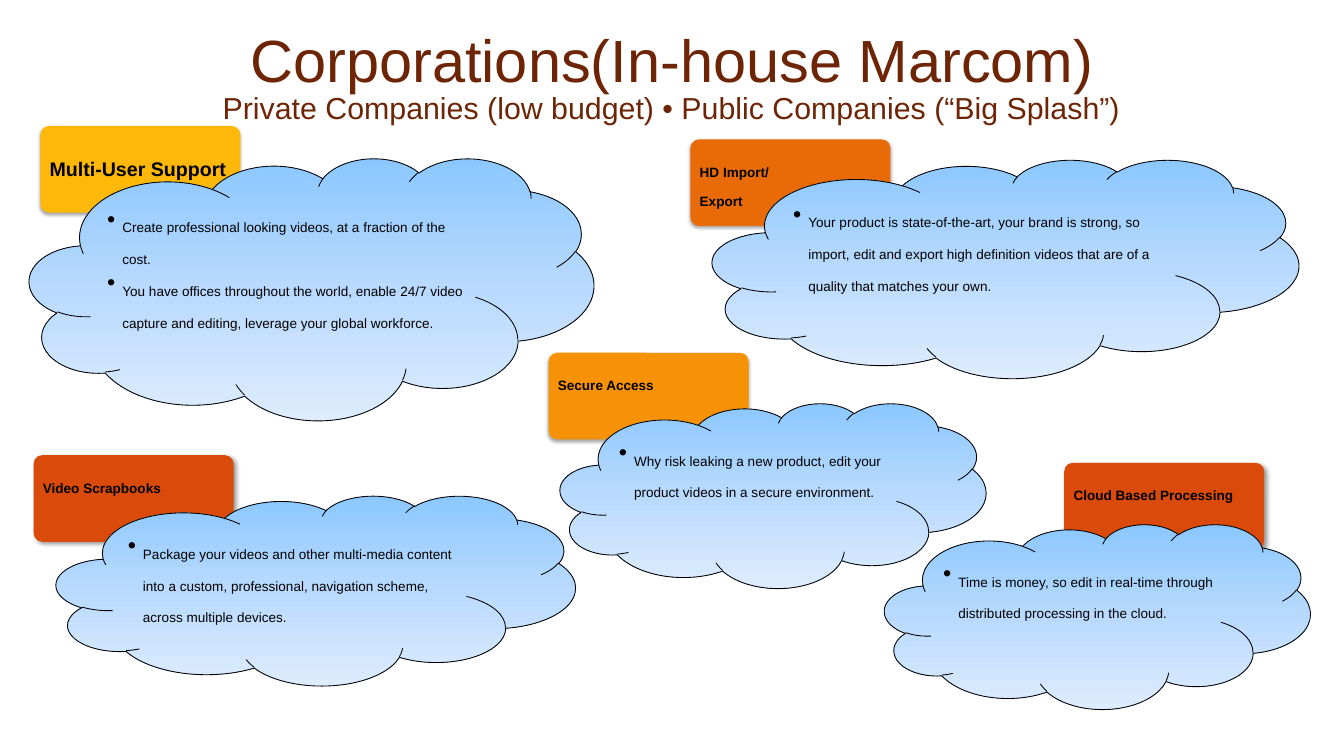
import pptx
import pptx.util
import pptx.dml.color
import pptx.enum.shapes
import pptx.enum.text
import pptx.oxml
import pptx.oxml.ns
from dataclasses import dataclass

Pt = pptx.util.Pt
RGB = pptx.dml.color.RGBColor.from_string
SHAPES = pptx.enum.shapes.MSO_SHAPE
TEXT = pptx.enum.text


@dataclass(frozen=True)
class Theme:
    font: str = "Arial"
    ink: str = "000000"
    title: str = "6D2506"
    sky: tuple = ((0, "8BC7FF"), (50, "B9DAFE"), (100, "DDECFE"))
    title_size: int = 51
    subtitle_size: int = 26
    body_size: int = 20
    lead_size: int = 29
    lowered: str = "-25000"
    soft: tuple = (35, 3.1, 1.8, 90)  # opacity, blur, distance, angle
    deep: tuple = (40, 4, 3, 45)


theme = Theme()


def parse_xml(tag, content, attributes=""):
    space = pptx.oxml.ns.nsdecls("a")
    return pptx.oxml.parse_xml(f"<a:{tag} {space} {attributes}>{content}</a:{tag}>")


def write_lines(para, lines, size, bold=False):
    """Fill a paragraph with lowered text, one run per line."""
    for number, line in enumerate(lines):
        if number:
            para.add_line_break()
        span = para.add_run()
        span.text = line
        span._r.get_or_add_rPr().set("baseline", theme.lowered)
    para.alignment = TEXT.PP_ALIGN.LEFT
    para.font.name = theme.font
    para.font.size = Pt(size)
    para.font.bold = bold
    para.font.color.rgb = RGB(theme.ink)


deck = pptx.Presentation()
deck.slide_width, deck.slide_height = Pt(1152), Pt(648)
page = deck.slides.add_slide(deck.slide_layouts[5])

# Title and subtitle
title = page.shapes.title
title.left, title.top, title.width, title.height = Pt(57.6), Pt(14.4), Pt(1036.8), Pt(108)
frame = title.text_frame
frame.auto_size = TEXT.MSO_AUTO_SIZE.NONE
frame.word_wrap = True
frame.vertical_anchor = TEXT.MSO_ANCHOR.MIDDLE
frame.margin_left = frame.margin_right = Pt(10)
frame.margin_top = frame.margin_bottom = Pt(5)
para = frame.paragraphs[0]
para.alignment = TEXT.PP_ALIGN.CENTER
para.line_spacing = 0.85
for text, size in (
    ("Corporations(In-house Marcom)", theme.title_size),
    ("Private Companies (low budget) • Public Companies (“Big Splash”)", theme.subtitle_size),
):
    if para.runs:
        para.add_line_break()
    span = para.add_run()
    span.text = text
    span.font.size = Pt(size)
    span.font.name = theme.font
    span.font.color.rgb = RGB(theme.title)

# Benefits: label lines, label size, label place, colour, shadow, cloud place, bullets
benefits = [
    (["Multi-User Support"], theme.lead_size, (34.6, 108), "FEB80A", theme.soft,
     (25.2, 135.4, 483.8, 224.6),
     ["Create professional looking videos, at a fraction of the cost.",
      "You have offices throughout the world, enable 24/7 video capture and editing, "
      "leverage your global workforce."]),
    (["Secure Access"], theme.body_size, (470.2, 302.4), "F79105", theme.soft,
     (480.2, 345.6, 365, 158.4),
     ["Why risk leaking a new product, edit your product videos in a secure environment."]),
    (["HD Import/", "Export"], theme.body_size, (591.8, 119.5), "E86B08", theme.soft,
     (610.6, 136.8, 502.6, 187.2),
     ["Your product is state-of-the-art, your brand is strong, so import, edit and export "
      "high definition videos that are of a quality that matches your own."]),
    (["Video Scrapbooks"], theme.body_size, (28.8, 390.2), "D94A0B", theme.deep,
     (48.2, 424.8, 445, 162.7),
     ["Package your videos and other multi-media content into a custom, professional, "
      "navigation scheme, across multiple devices."]),
    (["Cloud Based Processing"], theme.body_size, (912.2, 396.7), "D94A0B", theme.deep,
     (758.2, 449.3, 365, 158.4),
     ["Time is money, so edit in real-time through distributed processing in the cloud."]),
]

for lines, size, place, colour, shade, cloud_place, bullets in benefits:
    # Label card
    card = page.shapes.add_shape(
        SHAPES.ROUNDED_RECTANGLE, *map(Pt, place), Pt(171.4), Pt(74.2))
    card.adjustments[0] = 0.1
    card.fill.solid()
    card.fill.fore_color.rgb = RGB(colour)
    card.line.fill.background()
    card.shadow.inherit = False
    opacity, blur, distance, angle = shade
    effects = card._element.spPr.find(pptx.oxml.ns.qn("a:effectLst"))
    effects.append(parse_xml(
        "outerShdw",
        f'<a:srgbClr val="{theme.ink}"><a:alpha val="{opacity * 1000}"/></a:srgbClr>',
        f'blurRad="{Pt(blur)}" dist="{Pt(distance)}" dir="{angle * 60000}" rotWithShape="0"'))
    frame = card.text_frame
    frame.word_wrap = True
    frame.vertical_anchor = TEXT.MSO_ANCHOR.TOP
    frame.margin_left = frame.margin_right = frame.margin_top = Pt(5.8)
    frame.margin_bottom = Pt(2)
    para = frame.paragraphs[0]
    para.line_spacing = 0.9
    write_lines(para, lines, size, bold=True)

    # Cloud with bullets
    cloud = page.shapes.add_shape(SHAPES.CLOUD, *map(Pt, cloud_place))
    stops = "".join(
        f'<a:gs pos="{position * 1000}"><a:srgbClr val="{tint}"/></a:gs>'
        for position, tint in theme.sky)
    cloud._element.spPr.insert(2, parse_xml(
        "gradFill", f'<a:gsLst>{stops}</a:gsLst><a:lin ang="5400000" scaled="0"/>'))
    cloud.line.color.rgb = RGB(theme.ink)
    cloud.line.width = Pt(0.75)
    cloud.shadow.inherit = False
    frame = cloud.text_frame
    frame.word_wrap = True
    frame.vertical_anchor = TEXT.MSO_ANCHOR.TOP
    frame.margin_left = frame.margin_right = Pt(0)
    frame.margin_top = frame.margin_bottom = Pt(5)
    for number, bullet in enumerate(bullets):
        para = frame.add_paragraph() if number else frame.paragraphs[0]
        properties = para._p.get_or_add_pPr()
        properties.set("marL", str(Pt(13)))
        properties.set("indent", str(-Pt(13)))
        properties.append(parse_xml("buFont", "", f'typeface="{theme.font}"'))
        properties.append(parse_xml("buChar", "", 'char="•"'))
        write_lines(para, [bullet], theme.body_size)

deck.save("out.pptx")
